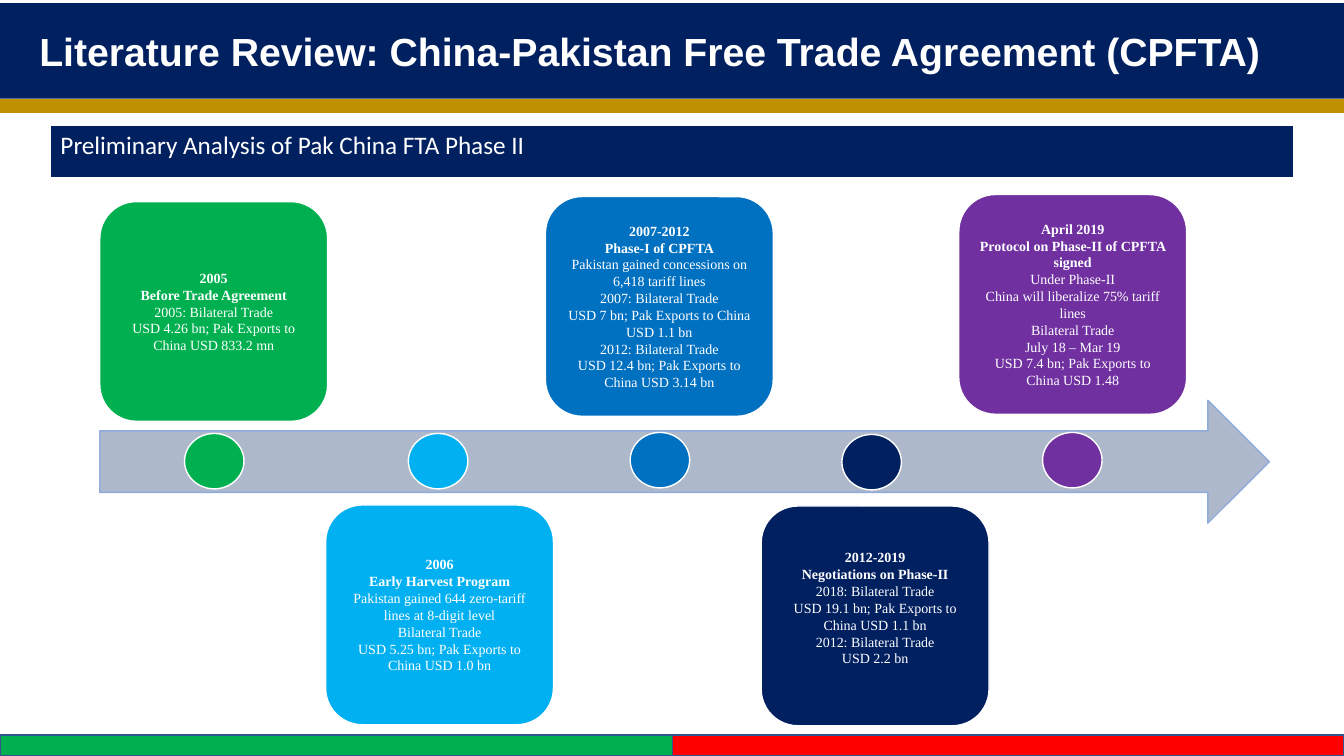
from dataclasses import dataclass

from lxml.etree import SubElement
from pptx import Presentation
from pptx.dml.color import RGBColor
from pptx.enum.shapes import MSO_CONNECTOR, MSO_SHAPE
from pptx.enum.text import MSO_ANCHOR, PP_ALIGN
from pptx.oxml.ns import qn
from pptx.shapes.autoshape import Shape
from pptx.slide import Slide
from pptx.text.text import TextFrame
from pptx.util import Emu, Pt

SCALE = 9144  # EMU per px, 100 px to the inch
WIDTH, HEIGHT = 1333, 750
CARD_W, CARD_H = 226, 218
DOT_W, DOT_H = 59, 55


@dataclass(frozen=True)
class Theme:
    navy: str = "002060"
    gold: str = "BF9000"
    white: str = "FFFFFF"
    green: str = "00B050"
    sky: str = "00B0F0"
    blue: str = "0070C0"
    purple: str = "7030A0"
    red: str = "FF0000"
    gray: str = "ADB9CA"
    edge: str = "8FAADC"
    trim: str = "325491"
    title: int = 28
    band: int = 18
    body: int = 10


THEME = Theme()


@dataclass(frozen=True)
class Box:
    left: int
    top: int
    width: int
    height: int

    def emu(self) -> tuple[Emu, ...]:
        return tuple(px(n) for n in (self.left, self.top, self.width, self.height))


@dataclass(frozen=True)
class Stage:
    """A card and its dot; the first two lines of text are headings."""
    left: int
    top: int
    dot_left: int
    dot_top: int
    color: str
    lines: tuple[str, ...]
    foot: int = 5


STAGES = (
    Stage(99, 200, 183, 430, THEME.green, (
        "2005", "Before Trade Agreement", "2005: Bilateral Trade",
        "USD 4.26 bn; Pak Exports to China USD 833.2 mn")),
    Stage(323, 501, 405, 430, THEME.sky, (
        "2006", "Early Harvest Program",
        "Pakistan gained 644 zero-tariff lines at 8-digit level",
        "Bilateral Trade", "USD 5.25 bn; Pak Exports to China USD 1.0 bn")),
    Stage(541, 195, 625, 429, THEME.blue, (
        "2007-2012", "Phase-I of CPFTA",
        "Pakistan gained concessions on 6,418 tariff lines",
        "2007: Bilateral Trade", "USD 7 bn; Pak Exports to China USD 1.1 bn",
        "2012: Bilateral Trade", "USD 12.4 bn; Pak Exports to China USD 3.14 bn")),
    Stage(755, 502, 835, 431, THEME.navy, (
        "2012-2019", "Negotiations on Phase-II", "2018: Bilateral Trade",
        "USD 19.1 bn; Pak Exports to China USD 1.1 bn",
        "2012: Bilateral Trade", "USD 2.2 bn"), foot=21),
    Stage(951, 193, 1034, 429, THEME.purple, (
        "April 2019", "Protocol on Phase-II of CPFTA signed", "Under Phase-II",
        "China will liberalize 75% tariff lines", "Bilateral Trade",
        "July 18 – Mar 19", "USD 7.4 bn; Pak Exports to China USD 1.48")),
)


def px(count: int) -> Emu:
    return Emu(count * SCALE)


def rgb(code: str) -> RGBColor:
    return RGBColor.from_string(code)


def write(frame: TextFrame, *lines: str, font: str, size: int, bold: int = 0,
          align: PP_ALIGN = PP_ALIGN.LEFT) -> None:
    """Fill the frame with white lines, the first `bold` of them bold."""
    frame.word_wrap = True
    for i, line in enumerate(lines):
        para = frame.paragraphs[0] if i == 0 else frame.add_paragraph()
        para.alignment = align
        run = para.add_run()
        run.text = line
        run.font.name = font
        run.font.size = Pt(size)
        run.font.bold = i < bold
        run.font.color.rgb = rgb(THEME.white)


def draw(slide: Slide, kind: MSO_SHAPE, box: Box, fill: str,
         line: str | None = None) -> Shape:
    shape = slide.shapes.add_shape(kind, *box.emu())
    shape.shadow.inherit = False
    shape.fill.solid()
    shape.fill.fore_color.rgb = rgb(fill)
    if line:
        shape.line.color.rgb = rgb(line)
        shape.line.width = Pt(1)
    else:
        shape.line.fill.background()
    return shape


def add_header(slide: Slide) -> None:
    head = draw(slide, MSO_SHAPE.RECTANGLE, Box(0, 3, WIDTH, 95), THEME.navy)
    frame = head.text_frame
    frame.margin_left = px(39)
    frame.vertical_anchor = MSO_ANCHOR.MIDDLE
    write(frame, "Literature Review: China-Pakistan Free Trade Agreement (CPFTA)",
          font="Arial", size=THEME.title, bold=1)
    rule = slide.shapes.add_connector(
        MSO_CONNECTOR.STRAIGHT, px(0), px(105), px(WIDTH), px(105))
    rule.line.color.rgb = rgb(THEME.gold)
    rule.line.width = Pt(10)
    SubElement(rule._element.spPr, qn("a:effectLst"))


def add_band(slide: Slide) -> None:
    table = slide.shapes.add_table(1, 1, *Box(50, 124, 1233, 53).emu()).table
    table.first_row = table.horz_banding = False
    cell = table.cell(0, 0)
    props = cell._tc.get_or_add_tcPr()
    for side, width in (("L", 1), ("R", 1), ("T", 1), ("B", 3)):
        edge = SubElement(props, qn(f"a:ln{side}"), w=str(Pt(width)))
        fill = SubElement(edge, qn("a:solidFill"))
        SubElement(fill, qn("a:srgbClr"), val=THEME.white)
    cell.fill.solid()
    cell.fill.fore_color.rgb = rgb(THEME.navy)
    write(cell.text_frame, "Preliminary Analysis of Pak China FTA Phase II",
          font="Calibri", size=THEME.band)


def add_stage(slide: Slide, stage: Stage) -> None:
    card = draw(slide, MSO_SHAPE.ROUNDED_RECTANGLE,
                Box(stage.left, stage.top, CARD_W, CARD_H), stage.color, THEME.white)
    frame = card.text_frame
    frame.margin_bottom = px(stage.foot)
    frame.vertical_anchor = MSO_ANCHOR.MIDDLE
    write(frame, *stage.lines, font="Times New Roman", size=THEME.body,
          bold=2, align=PP_ALIGN.CENTER)
    draw(slide, MSO_SHAPE.OVAL, Box(stage.dot_left, stage.dot_top, DOT_W, DOT_H),
         stage.color, THEME.white)


def add_footer(slide: Slide) -> None:
    half = 667
    for left, width, color in ((0, half, THEME.green),
                               (half, WIDTH - half, THEME.red)):
        draw(slide, MSO_SHAPE.RECTANGLE, Box(left, 729, width, 21), color, THEME.trim)


def main() -> None:
    deck = Presentation()
    deck.slide_width, deck.slide_height = px(WIDTH), px(HEIGHT)
    slide = deck.slides.add_slide(deck.slide_layouts[6])
    add_header(slide)
    add_band(slide)
    draw(slide, MSO_SHAPE.RIGHT_ARROW, Box(99, 397, 1160, 122), THEME.gray, THEME.edge)
    for stage in STAGES:
        add_stage(slide, stage)
    add_footer(slide)
    deck.save("out.pptx")


if __name__ == "__main__":
    main()
